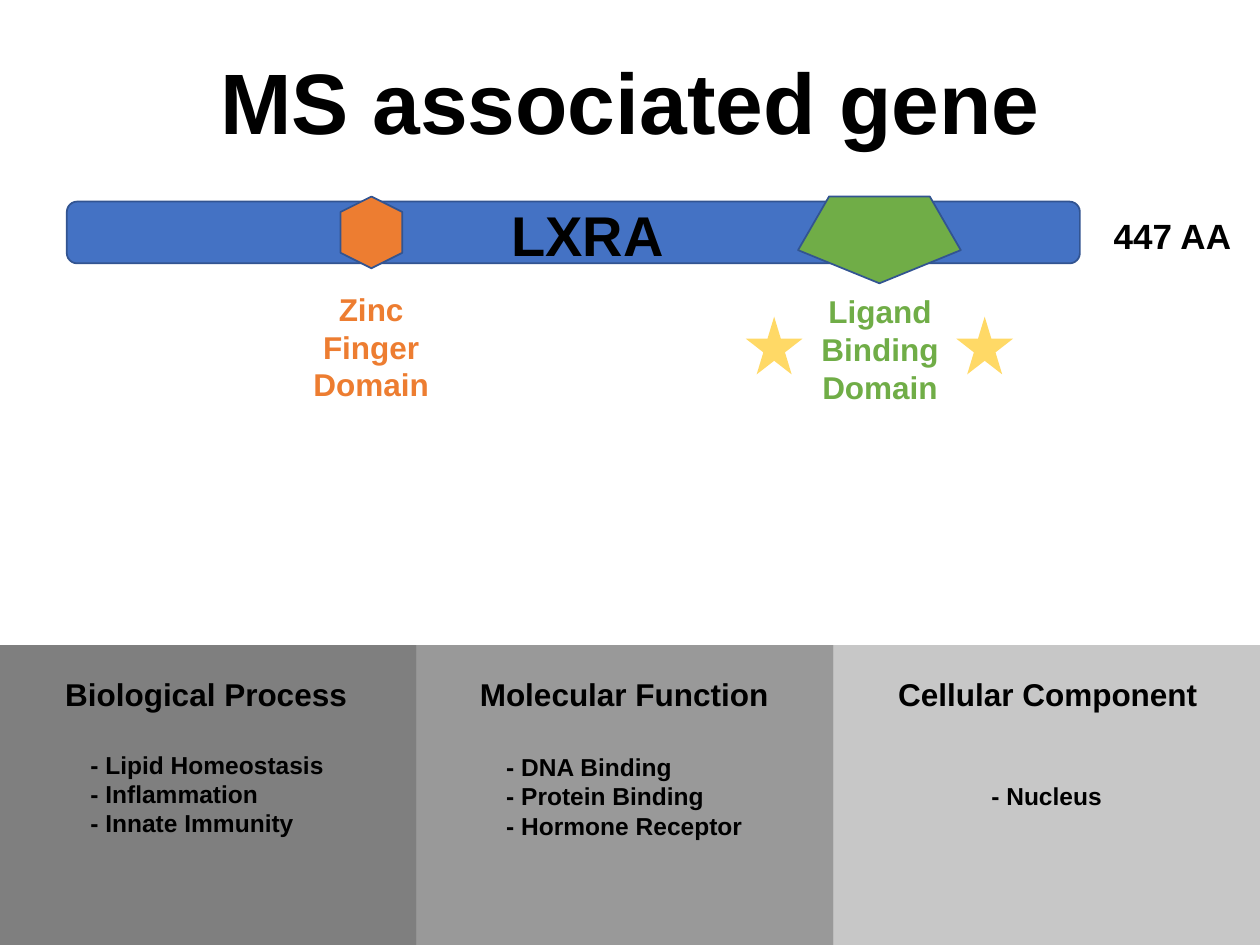
from dataclasses import dataclass
from lxml.etree import SubElement
from pptx import Presentation
from pptx.dml.color import RGBColor
from pptx.enum.shapes import MSO_SHAPE as SHAPE
from pptx.enum.text import MSO_ANCHOR as ANCHOR, MSO_AUTO_SIZE as AUTO, PP_ALIGN as ALIGN
from pptx.oxml.ns import qn
from pptx.util import Pt


@dataclass(frozen=True)
class Theme:
    font: str = "Arial"
    ink: str = "000000"
    outline: str = "325491"
    protein: str = "4472C4"
    zinc: str = "ED7D31"
    ligand: str = "70AD47"
    star: str = "FFD966"
    title: int = 49
    gene: int = 32
    length: int = 20
    label: int = 18
    item: int = 14


class Deck:
    def __init__(self, prs, theme):
        self.theme = theme
        self.slide = prs.slides.add_slide(prs.slide_layouts[6])

    def shape(self, kind, box, color, outlined=False, rotation=0, opacity=None):
        sp = self.slide.shapes.add_shape(kind, *map(Pt, box))
        sp.shadow.inherit = False
        sp.rotation = rotation
        sp.fill.solid()
        sp.fill.fore_color.rgb = RGBColor.from_string(color)
        if opacity is not None:
            clr = sp.fill._xPr.find(qn("a:solidFill"))[0]
            SubElement(clr, qn("a:alpha")).set("val", str(opacity * 1000))
        if outlined:
            sp.line.color.rgb = RGBColor.from_string(self.theme.outline)
            sp.line.width = Pt(1)
        else:
            sp.line.fill.background()
        return sp

    def text(self, text, box, size, color=None, wrap=False, align=ALIGN.LEFT):
        sp = self.slide.shapes.add_textbox(*map(Pt, box))
        tf = sp.text_frame
        tf.text = text
        tf.word_wrap = wrap
        tf.auto_size = AUTO.SHAPE_TO_FIT_TEXT
        for p in tf.paragraphs:
            p.alignment = align
            for r in p.runs:
                r.font.name = self.theme.font
                r.font.size = Pt(size)
                r.font.bold = True
                r.font.color.rgb = RGBColor.from_string(color or self.theme.ink)
        return sp

    def title(self, text, box):
        tf = self.text(text, box, self.theme.title, wrap=True, align=ALIGN.CENTER).text_frame
        tf.auto_size = AUTO.NONE
        tf.vertical_anchor = ANCHOR.MIDDLE
        tf.paragraphs[0].line_spacing = 0.9

    def domain(self, kind, box, rotation, name, name_box, color):
        self.shape(kind, box, color, outlined=True, rotation=rotation)
        self.text(name, name_box, self.theme.label, color, wrap=True, align=ALIGN.CENTER)

    def panel(self, box, opacity, heading, heading_box, items, items_box):
        self.shape(SHAPE.RECTANGLE, box, self.theme.ink, opacity=opacity)
        self.text(heading, heading_box, self.theme.label)
        self.text("\n".join(items), items_box, self.theme.item)


def main():
    prs = Presentation()
    prs.slide_width, prs.slide_height = Pt(720), Pt(540)
    theme = Theme()
    deck = Deck(prs, theme)

    deck.title("MS associated gene", (0, 8.6, 720, 104.4))

    panel_top, panel_width, panel_height = 368.6, 238.1, 171.4
    panels = [
        (238.1, 50, "Biological Process", (30.2, 177.1),
         ["- Lipid Homeostasis", "- Inflammation", "- Innate Immunity"],
         (44.6, 424.8, 148.3, 58.3)),
        (238.1, 40, "Molecular Function", (267.1, 181.4),
         ["- DNA Binding", "- Protein Binding", "- Hormone Receptor"],
         (282.2, 426.2, 149.8, 58.3)),
        (247, 22, "Cellular Component", (506.2, 187.2),
         ["- Nucleus"], (559.4, 442.8, 77.8, 24.5)),
    ]
    for i, (width, opacity, heading, (x, w), items, items_box) in enumerate(panels):
        deck.panel((i * panel_width, panel_top, width, panel_height), opacity,
                   heading, (x, 382.3, w, 28.8), items, items_box)

    deck.shape(SHAPE.ROUNDED_RECTANGLE, (38.2, 115.2, 578.9, 35.3),
               theme.protein, outlined=True)
    deck.domain(SHAPE.HEXAGON, (191.7, 115.2, 41, 35.3), 90,
                "Zinc Finger Domain", (164.2, 162, 95.8, 72.7), theme.zinc)
    deck.domain(SHAPE.REGULAR_PENTAGON, (456, 112.2, 93, 49.7), 180,
                "Ligand Binding Domain", (455, 163.4, 95.8, 72.7), theme.ligand)
    deck.text("LXRA", (285.1, 110.9, 102.2, 46.1), theme.gene)
    deck.text("447 AA", (629.3, 118.8, 82.1, 31.7), theme.length)

    for x in (426.2, 546.5):
        deck.shape(SHAPE.STAR_5_POINT, (x, 181, 32.4, 33), theme.star)

    prs.save("out.pptx")


if __name__ == "__main__":
    main()
